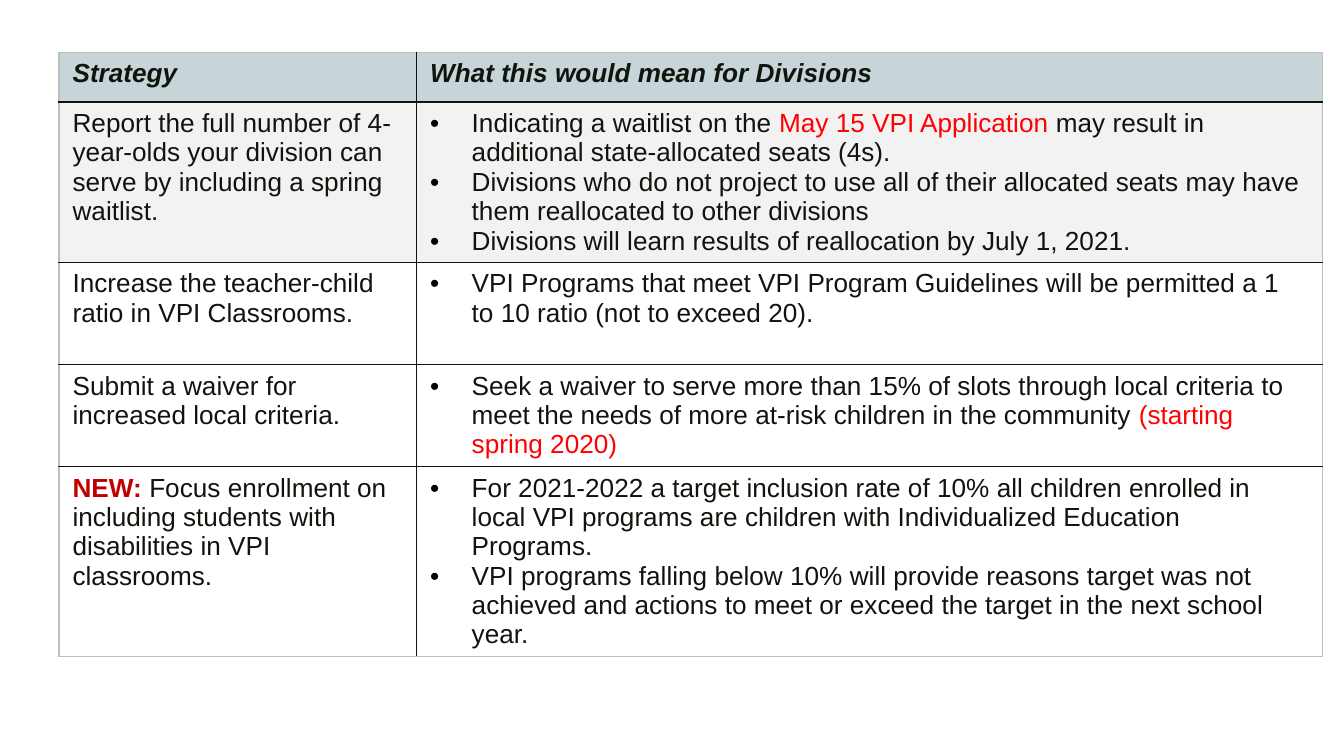
from dataclasses import dataclass

from lxml.etree import SubElement
from pptx import Presentation
from pptx.dml.color import RGBColor
from pptx.oxml.ns import qn
from pptx.util import Inches, Pt


@dataclass(frozen=True)
class Theme:
    font: str = "Arial"
    size: float = 14
    ink: str = "0F150D"
    alert: str = "FF0000"
    new: str = "C00000"
    bullet: str = "000000"
    header: str = "C7D4D8"
    shaded: str = "F2F2F2"
    plain: str = "FFFFFF"
    frame: str = "BFBFBF"
    rule_width: float = 1


THEME = Theme()

SLIDE_WIDTH = 10
SLIDE_HEIGHT = SLIDE_WIDTH * 9 / 16
TABLE_LEFT, TABLE_TOP = 0.44, 0.39
COLUMN_WIDTHS = (2.66, 6.74)
HEADER_HEIGHT = 0.37
BULLET_INDENT = 0.31

HEADINGS = ("Strategy", "What this would mean for Divisions")

# Each paragraph is a list of (words, style) pieces.
# Each row: height, fill, strategy paragraph, list of meaning paragraphs.
STRATEGIES = [
    (1.19, THEME.shaded,
     [("Report the full number of 4-year-olds your division can serve by "
       "including a spring waitlist.", "body")],
     [[("Indicating a waitlist on the ", "body"),
       ("May 15 VPI Application ", "alert"),
       ("may result in additional state-allocated seats (4s).", "body")],
      [("Divisions who do not project to use all of their allocated seats may "
        "have them reallocated to other divisions", "body")],
      [("Divisions will learn results of reallocation by July 1, 2021.", "body")]]),
    (0.76, THEME.plain,
     [("Increase the teacher-child ratio in VPI Classrooms.", "body")],
     [[("VPI Programs that meet VPI Program Guidelines will be permitted a "
        "1 to 10 ratio (not to exceed 20).", "body")]]),
    (0.76, THEME.plain,
     [("Submit a waiver for increased local criteria.", "body")],
     [[("Seek a waiver to serve more than 15% of slots through local criteria "
        "to meet the needs of more at-risk children in the community ", "body"),
       ("(starting spring 2020)", "alert")]]),
    (1.41, THEME.plain,
     [("NEW: ", "new"),
      ("Focus enrollment on including students with disabilities in VPI "
       "classrooms.", "body")],
     [[("For 2021-2022 a target inclusion rate of 10% all children enrolled in "
        "local VPI programs are children with Individualized Education "
        "Programs.", "body")],
      [("VPI programs falling below 10% will provide reasons target was not "
        "achieved and actions to meet or exceed the target in the next school "
        "year.", "body")]]),
]

# style: (colour, bold, italic)
STYLES = {
    "heading": (THEME.ink, True, True),
    "body": (THEME.ink, False, False),
    "alert": (THEME.alert, False, False),
    "new": (THEME.new, True, False),
}


def add_bullet(paragraph):
    properties = paragraph._p.get_or_add_pPr()
    indent = Inches(BULLET_INDENT)
    properties.set("marL", str(indent))
    properties.set("indent", str(-indent))
    bullet_color = SubElement(properties, qn("a:buClr"))
    SubElement(bullet_color, qn("a:srgbClr"), val=THEME.bullet)
    SubElement(properties, qn("a:buFont"), typeface=THEME.font)
    SubElement(properties, qn("a:buChar"), char="•")


def write_cell(cell, paragraphs, bulleted=False):
    frame = cell.text_frame
    for index, pieces in enumerate(paragraphs):
        paragraph = frame.add_paragraph() if index else frame.paragraphs[0]
        if bulleted:
            add_bullet(paragraph)
        for words, style in pieces:
            run = paragraph.add_run()
            run.text = words
            color, run.font.bold, run.font.italic = STYLES[style]
            run.font.name = THEME.font
            run.font.size = Pt(THEME.size)
            run.font.color.rgb = RGBColor.from_string(color)


def set_borders(cell, outer_sides):
    """Draw the inner rules dark and the sides on the table's edge grey."""
    properties = cell._tc.get_or_add_tcPr()
    for side in "LRTB":
        line = SubElement(properties, qn(f"a:ln{side}"),
                          w=str(Pt(THEME.rule_width)))
        fill = SubElement(line, qn("a:solidFill"))
        SubElement(fill, qn("a:srgbClr"),
                   val=THEME.frame if side in outer_sides else THEME.ink)


def main():
    deck = Presentation()
    deck.slide_width = Inches(SLIDE_WIDTH)
    deck.slide_height = Inches(SLIDE_HEIGHT)
    slide = deck.slides.add_slide(deck.slide_layouts[6])

    heights = [HEADER_HEIGHT] + [height for height, *_ in STRATEGIES]
    fills = [THEME.header] + [fill for _, fill, *_ in STRATEGIES]
    strategy_table = slide.shapes.add_table(
        len(heights), len(COLUMN_WIDTHS), Inches(TABLE_LEFT), Inches(TABLE_TOP),
        Inches(sum(COLUMN_WIDTHS)), Inches(sum(heights))).table

    for column, width in zip(strategy_table.columns, COLUMN_WIDTHS):
        column.width = Inches(width)

    for r, (height, fill) in enumerate(zip(heights, fills)):
        strategy_table.rows[r].height = Inches(height)
        row_edge = {0: "T", len(heights) - 1: "B"}.get(r, "")
        for cell, column_edge in zip(strategy_table.rows[r].cells, "LR"):
            set_borders(cell, row_edge + column_edge)
            cell.fill.solid()
            cell.fill.fore_color.rgb = RGBColor.from_string(fill)

    for c, heading in enumerate(HEADINGS):
        write_cell(strategy_table.cell(0, c), [[(heading, "heading")]])
    for r, (_, _, strategy, meanings) in enumerate(STRATEGIES, start=1):
        write_cell(strategy_table.cell(r, 0), [strategy])
        write_cell(strategy_table.cell(r, 1), meanings, bulleted=True)

    deck.save("out.pptx")


if __name__ == "__main__":
    main()
